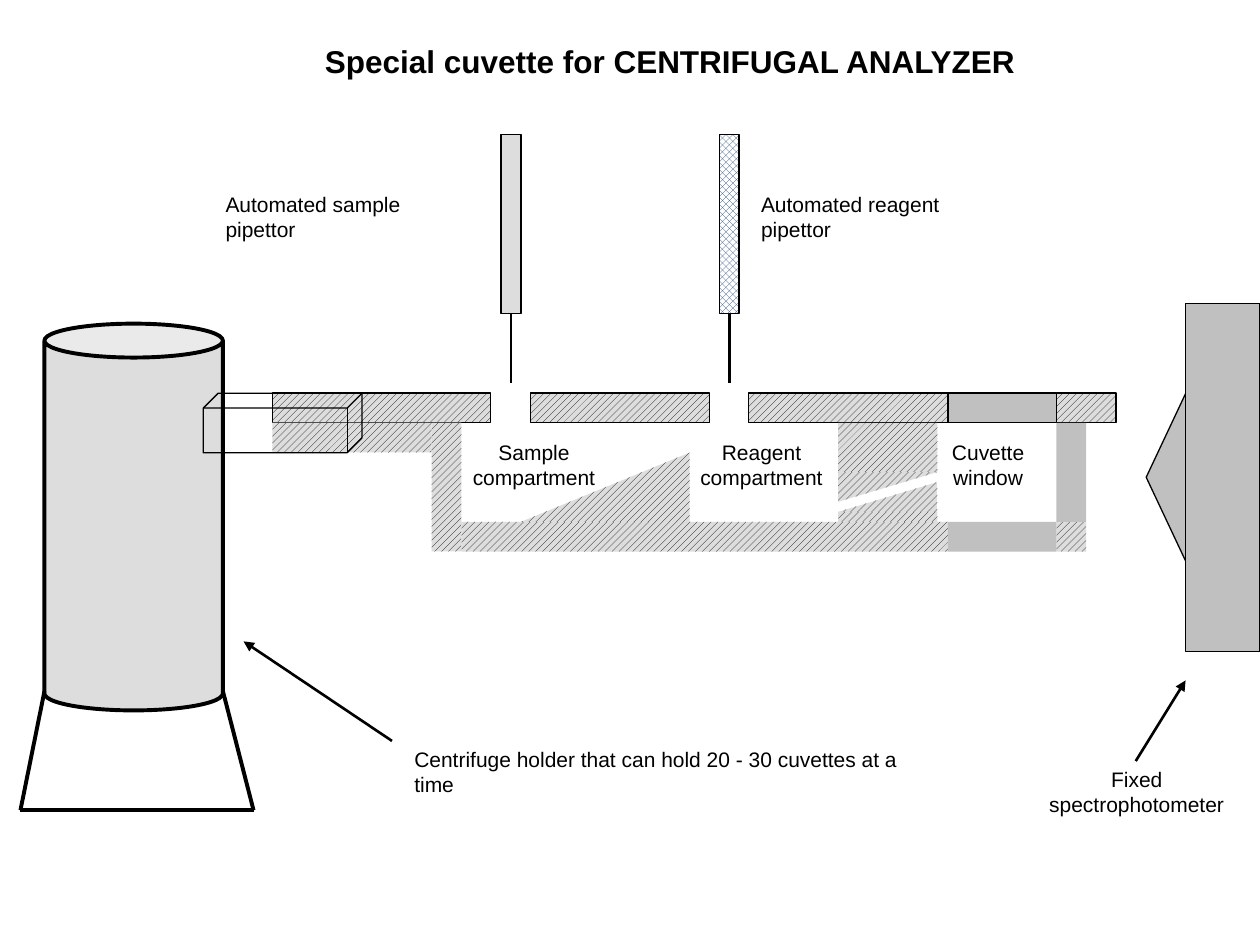
from collections import namedtuple
from dataclasses import dataclass

from pptx import Presentation
from pptx.dml.color import RGBColor as Rgb
from pptx.enum.dml import MSO_PATTERN_TYPE as Pattern
from pptx.enum.shapes import MSO_CONNECTOR as Wire, MSO_SHAPE as Kind
from pptx.enum.text import MSO_ANCHOR as Anchor, PP_ALIGN as Align
from pptx.oxml.ns import qn
from pptx.util import Pt
from lxml.etree import SubElement

Box = namedtuple("Box", "x y w h")


@dataclass(frozen=True)
class Theme:
    ink: Rgb = Rgb(0, 0, 0)
    white: Rgb = Rgb(255, 255, 255)
    pale: Rgb = Rgb(0xDD, 0xDD, 0xDD)
    grey: Rgb = Rgb(0xC0, 0xC0, 0xC0)
    blue: Rgb = Rgb(0x1F, 0x49, 0x7D)
    font: str = "Arial"
    head: int = 18
    body: int = 12
    thin: float = 0.75
    mid: float = 1.5
    thick: float = 2.25


T = Theme()
HATCH = (Pattern.WIDE_UPWARD_DIAGONAL, T.ink, T.pale)
MESH = (Pattern.SOLID_DIAMOND, T.blue, T.white)


def paint(fill, look):
    """Apply no fill, a pattern (kind, front, back) or a plain colour."""
    if look is None:
        fill.background()
    elif look in (HATCH, MESH):
        fill.patterned()
        fill.pattern, fill.fore_color.rgb, fill.back_color.rgb = look
    else:
        fill.solid()
        fill.fore_color.rgb = look


def add_part(slide, kind, box, look, width=0, flip=None):
    part = slide.shapes.add_shape(kind, *map(Pt, box))
    part.shadow.inherit = False
    paint(part.fill, look)
    paint(part.line.fill, T.ink if width else None)
    if width:
        part.line.width = Pt(width)
    if flip:
        part._element.spPr.find(qn("a:xfrm")).set(flip, "1")
    return part


def add_line(slide, start, end, width, arrow=False):
    line = slide.shapes.add_connector(Wire.STRAIGHT, *map(Pt, start + end))
    line.line.color.rgb = T.ink
    line.line.width = Pt(width)
    if arrow:
        SubElement(line.line._get_or_add_ln(), qn("a:tailEnd"), type="triangle")
    SubElement(line._element.spPr, qn("a:effectLst"))
    return line


def write(frame, lines, size, bold=False, align=Align.LEFT, wrap=True):
    layout = {"word_wrap": wrap, "vertical_anchor": Anchor.TOP,
              "margin_left": Pt(7.2), "margin_right": Pt(7.2),
              "margin_top": Pt(3.6), "margin_bottom": Pt(3.6)}
    for name, value in layout.items():
        setattr(frame, name, value)
    frame.text = "\n".join(lines)
    style = {"name": T.font, "size": Pt(size), "bold": bold}
    for para in frame.paragraphs:
        para.alignment = align
        font = para.runs[0].font
        for name, value in style.items():
            setattr(font, name, value)
        font.color.rgb = T.ink


def add_note(slide, box, *lines):
    """Several lines are centred; a single one wraps in its box."""
    many = len(lines) > 1
    frame = slide.shapes.add_textbox(*map(Pt, box)).text_frame
    write(frame, lines, T.body, align=Align.CENTER if many else Align.LEFT,
          wrap=not many)


def draw_title(slide, box):
    title = slide.shapes.title
    for name, value in zip(("left", "top", "width", "height"), box):
        setattr(title, name, Pt(value))
    write(title.text_frame, ["Special cuvette for CENTRIFUGAL ANALYZER"],
          T.head, bold=True, align=Align.CENTER, wrap=False)


def draw_cuvette(slide, box):
    x, y = box.x, box.y
    wall = 17                      # thickness of lid, walls and floor
    under, floor = y + wall, y + box.h - wall
    pane, pane_w = x + 386, 62     # window in lid and floor
    edge = pane + pane_w
    inner = x + 108                # inside of the left wall
    duct, duct_w = x + 323.3, 56.7

    # Lid with two openings
    for dx, w in ((0, 124.6), (272.2, 113.8), (147.6, 102.2), (448, 34)):
        add_part(slide, Kind.RECTANGLE, Box(x + dx, y, w, wall), HATCH, T.thin)
    add_part(slide, Kind.RECTANGLE, Box(pane, y, pane_w, wall), T.grey, T.thin)

    # Arm, left wall, floor and corner, then the duct blocks
    for part in (Box(x, under, inner - wall - x, wall),
                 Box(inner - wall, under, wall, box.h - wall),
                 Box(inner, floor, pane - inner, wall),
                 Box(edge, floor, wall, wall),
                 Box(duct, under, duct_w, 28.2),
                 Box(duct, floor - 5.7, duct_w, 5.7)):
        add_part(slide, Kind.RECTANGLE, part, HATCH)

    # Clear window parts in floor and right wall
    for part in (Box(pane, floor, pane_w, wall),
                 Box(edge, under, wall, floor - under)):
        add_part(slide, Kind.RECTANGLE, part, T.grey)

    # Ramp and the two sides of the sloping duct
    for part, flip in ((Box(x + 142, floor - 39.6, 96.4, 39.6), "flipH"),
                       (Box(duct, floor - 22.7, duct_w, wall), "flipH"),
                       (Box(duct, under + 28.2, duct_w, wall), "flipV")):
        add_part(slide, Kind.RIGHT_TRIANGLE, part, HATCH, flip=flip)

    # Chamber names, each centred on its chamber
    name_w = 100
    for dx, name, rest in ((149.5, "Sample", "compartment"),
                           (279.5, "Reagent", "compartment"),
                           (409, "Cuvette", "window")):
        add_note(slide, Box(x + dx - name_w / 2, y + 23, name_w, 36),
                 name, rest)


def draw_holder(slide, box):
    x, y = box.x, box.y
    base, knee = y + box.h, y + 210
    left, right = x + 13.7, x + 115.7
    can = add_part(slide, Kind.CAN, Box(left, y, right - left, 221),
                   T.pale, T.thick)
    can.adjustments[0] = 0.19
    add_part(slide, Kind.CUBE, Box(x + 104.5, y + 39.7, 90.7, 34), None, T.thin)

    # Stand
    foot, toe = (x, base), (x + box.w, base)
    for start, end in (((right, knee), toe), ((left, knee), foot), (foot, toe)):
        add_line(slide, start, end, T.thick)

    # Caption and pointer
    add_line(slide, (x + 212.3, base - 39.6), (x + 127.5, base - 96.5),
             T.mid, arrow=True)
    add_note(slide, Box(x + 218, base - 39.9, 310, 36),
             "Centrifuge holder that can hold 20 - 30 cuvettes at a time")


def draw_reader(slide, box):
    x, y = box.x, box.y
    body = x + box.w - 42.5
    add_part(slide, Kind.DIAMOND, Box(x, y + 51, 45.4, 96.5), T.grey, T.thin)
    add_part(slide, Kind.RECTANGLE, Box(body, y, 42.5, box.h), T.grey, T.thin)
    add_line(slide, (x - 6, y + 261.4), (body, y + 215.3), T.mid, arrow=True)
    add_note(slide, Box(x - 66.4, y + 260.7, 122, 36),
             "Fixed", "spectrophotometer")


def draw_pipettor(slide, box, look, text, note):
    tube = add_part(slide, Kind.RECTANGLE, box, look, T.thin)
    mid, end = box.x + box.w / 2, box.y + box.h
    needle = add_line(slide, (mid, end), (mid, end + 39.5), T.mid)
    needle.begin_connect(tube, 2)
    add_note(slide, Box(note, box.y + 28.8, 150, 36), text)


def main():
    deck = Presentation()
    deck.slide_width, deck.slide_height = Pt(720), Pt(540)
    slide = deck.slides.add_slide(deck.slide_layouts[5])

    draw_title(slide, Box(177, 20.2, 411.8, 29))
    draw_cuvette(slide, Box(155.7, 224.6, 482, 90.6))
    draw_holder(slide, Box(11.7, 185, 133.2, 278))
    draw_reader(slide, Box(655, 173.5, 65, 198.7))
    for x, look, text, note in (
            (286.3, T.pale, "Automated sample pipettor", 121.8),
            (411, MESH, "Automated reagent pipettor", 427.8)):
        draw_pipettor(slide, Box(x, 77, 11.4, 102.2), look, text, note)

    deck.save("out.pptx")


if __name__ == "__main__":
    main()
